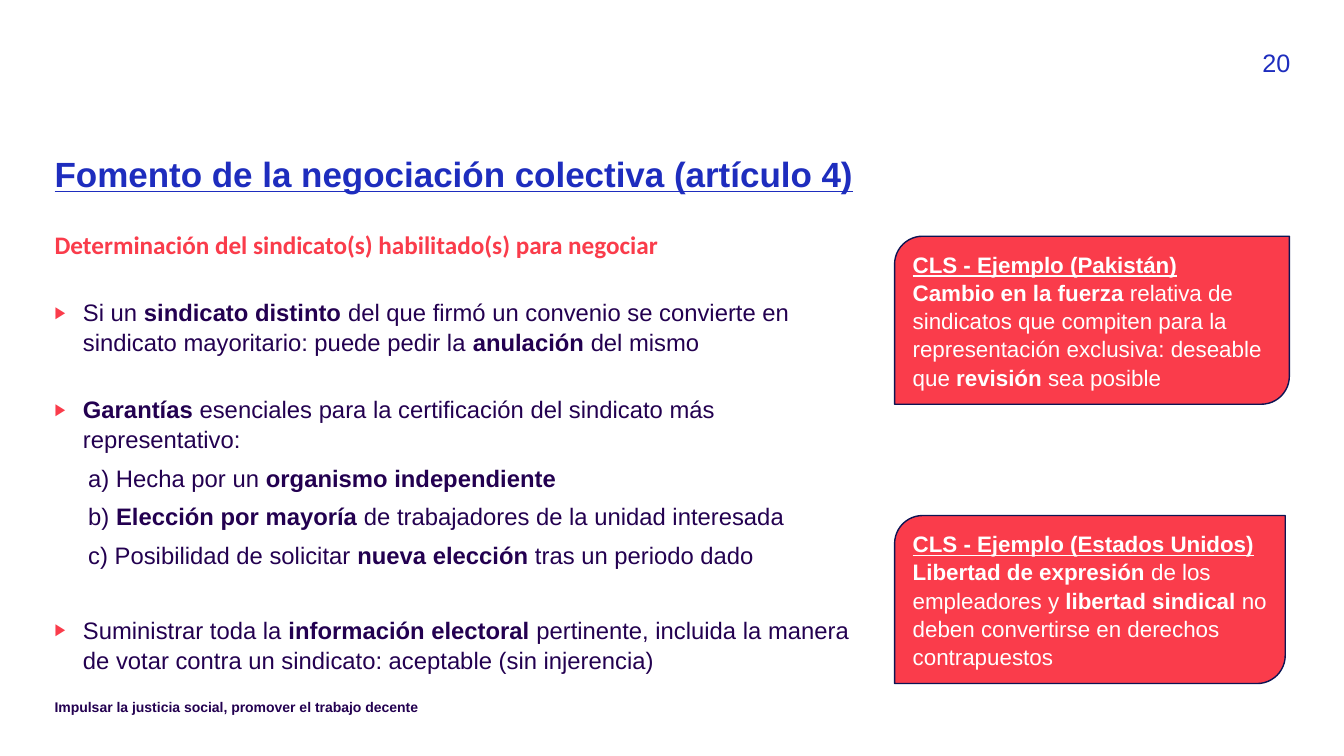
from lxml.etree import SubElement
from pptx import Presentation
from pptx.dml.color import RGBColor
from pptx.enum.shapes import MSO_SHAPE
from pptx.enum.text import MSO_ANCHOR, PP_ALIGN
from pptx.oxml.ns import qn
from pptx.util import Pt

BLUE = RGBColor(0x1E, 0x2D, 0xBE)
RED = RGBColor(0xFA, 0x3C, 0x4B)
PURPLE = RGBColor(0x23, 0x00, 0x50)
NAVY = RGBColor(0x0D, 0x14, 0x53)
WHITE = RGBColor(0xFF, 0xFF, 0xFF)


class SlideBuilder:
    PX = 9525  # EMU per px, 96 px to the inch
    FONT = "Arial"
    LEADING = 1.05

    def __init__(self, prs):
        prs.slide_width, prs.slide_height = self.emu(1280, 720)
        self.slide = prs.slides.add_slide(prs.slide_layouts[5])

    def emu(self, *lengths):
        return [length * self.PX for length in lengths]

    def add_runs(self, paragraph, text, size, color, font=FONT, underline=False):
        """Add runs; stretches between asterisks are bold."""
        for index, piece in enumerate(text.split("*")):
            if piece:
                run = paragraph.add_run()
                run.text = piece
                run.font.name = font
                run.font.size = Pt(size)
                run.font.color.rgb = color
                run.font.bold = index % 2 == 1
                run.font.underline = underline

    def space(self, paragraph, before=0, leading=LEADING):
        paragraph.line_spacing = leading
        paragraph.space_before = Pt(before)
        paragraph.space_after = Pt(0)

    def clear_margins(self, frame):
        frame.word_wrap = True
        frame.vertical_anchor = MSO_ANCHOR.TOP
        frame.margin_left = frame.margin_right = 0
        frame.margin_top = frame.margin_bottom = 0

    def title(self, box, text):
        heading = self.slide.shapes.title
        heading.left, heading.top, heading.width, heading.height = self.emu(*box)
        self.clear_margins(heading.text_frame)
        paragraph = heading.text_frame.paragraphs[0]
        paragraph.alignment = PP_ALIGN.LEFT
        self.space(paragraph, leading=0.9)
        self.add_runs(paragraph, text, 25, BLUE, underline=True)

    def text_area(self, box):
        frame = self.slide.shapes.add_textbox(*self.emu(*box)).text_frame
        self.clear_margins(frame)
        return frame

    def label(self, box, text, size, color, align=PP_ALIGN.LEFT):
        paragraph = self.text_area(box).paragraphs[0]
        paragraph.alignment = align
        self.add_runs(paragraph, text, size, color)

    def point(self, frame, text, before, indent, bullet):
        paragraph = frame.add_paragraph()
        self.space(paragraph, before)
        properties = paragraph._p.get_or_add_pPr()
        margin = indent * self.PX
        properties.set("marL", str(margin))
        properties.set("indent", str(-margin if bullet else 0))
        if bullet:
            bullet_color = SubElement(properties, qn("a:buClr"))
            SubElement(bullet_color, qn("a:srgbClr"), val=str(RED))
            SubElement(properties, qn("a:buSzPct"), val="70000")
            SubElement(properties, qn("a:buFont"), typeface=self.FONT)
            SubElement(properties, qn("a:buChar"), char="▶")
        self.add_runs(paragraph, text, 17, PURPLE)

    def example(self, box, heading, text):
        card = self.slide.shapes.add_shape(
            MSO_SHAPE.ROUND_2_DIAG_RECTANGLE, *self.emu(*box))
        card.shadow.inherit = False
        card.fill.solid()
        card.fill.fore_color.rgb = RED
        card.line.color.rgb = NAVY
        card.line.width = Pt(1)
        frame = card.text_frame
        frame.word_wrap = True
        frame.vertical_anchor = MSO_ANCHOR.MIDDLE
        first, second = frame.paragraphs[0], frame.add_paragraph()
        for paragraph in (first, second):
            paragraph.alignment = PP_ALIGN.LEFT
            self.space(paragraph)
        self.add_runs(first, heading, 16, WHITE, underline=True)
        self.add_runs(second, text, 16, WHITE)


def main():
    prs = Presentation()
    page = SlideBuilder(prs)

    # Title
    page.title((52, 150, 1177, 76),
               "*Fomento de la negociación colectiva (artículo 4)*")

    # Main argument: text, space before, indent, bullet
    argument = page.text_area((52, 217, 778, 427))
    subtitle = argument.paragraphs[0]
    page.space(subtitle)
    page.add_runs(subtitle, "*Determinación del sindicato(s) habilitado(s) para negociar*",
                  18, RED, font="Calibri")
    points = [
        ("Si un *sindicato distinto *del que firmó un convenio se convierte en "
         "sindicato mayoritario: puede pedir la *anulación* del mismo", 26.5, 27, True),
        ("*Garantías* esenciales para la certificación del sindicato más "
         "representativo:", 26.5, 27, True),
        ("a) Hecha por un *organismo independiente*", 6, 32, False),
        ("b) *Elección por mayoría* de trabajadores de la unidad interesada",
         6, 32, False),
        ("c) Posibilidad de solicitar *nueva elección* tras un periodo dado",
         6, 32, False),
        ("Suministrar toda la *información electoral* pertinente, incluida la manera "
         "de votar contra un sindicato: aceptable (sin injerencia)", 32.5, 27, True),
    ]
    for text, before, indent, bullet in points:
        page.point(argument, text, before, indent, bullet)

    # Country examples
    page.example((852, 225, 376, 160), "*CLS - Ejemplo (Pakistán)*",
                 "*Cambio en la fuerza *relativa de sindicatos que compiten para la "
                 "representación exclusiva: deseable que *revisión* sea posible")
    page.example((852, 491, 372, 160), "*CLS - Ejemplo (Estados Unidos)*",
                 "*Libertad de expresión *de los empleadores y *libertad sindical *"
                 "no deben convertirse en derechos contrapuestos")

    # Footer and page number
    page.label((52, 665, 588, 19),
               "*Impulsar la justicia social, promover el trabajo decente*", 10, PURPLE)
    page.label((1172, 45, 57, 30), "20", 18, BLUE, PP_ALIGN.RIGHT)

    prs.save("out.pptx")


if __name__ == "__main__":
    main()
